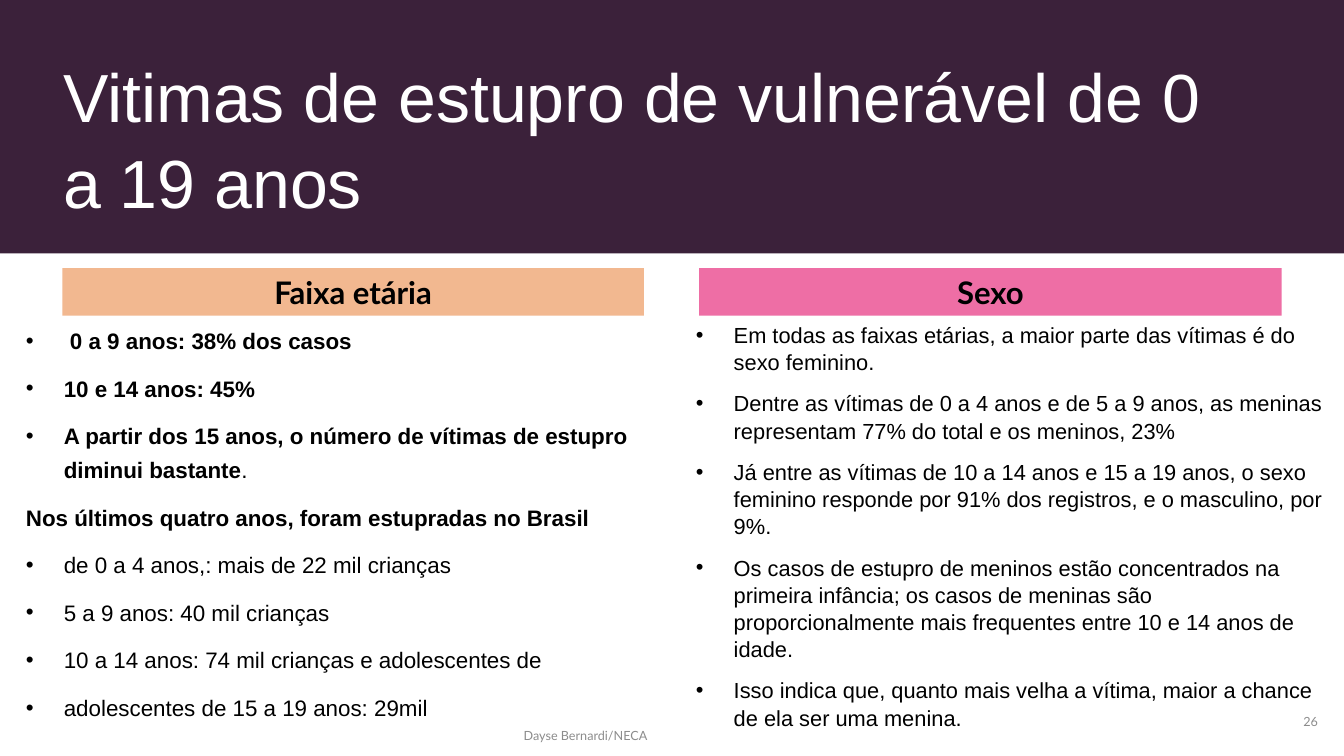
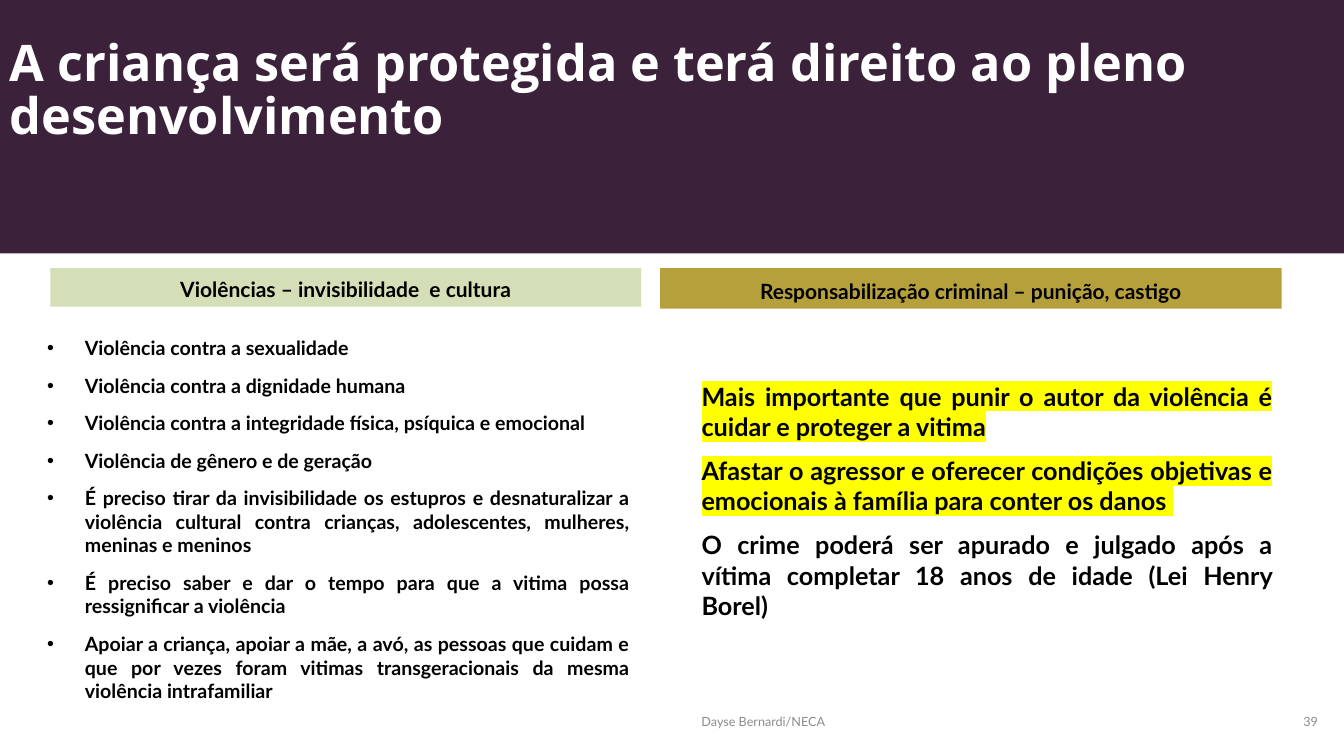
from lxml.etree import SubElement
from pptx import Presentation
from pptx.dml.color import RGBColor
from pptx.enum.shapes import MSO_SHAPE
from pptx.enum.text import MSO_ANCHOR as Anchor, PP_ALIGN as Align
from pptx.oxml.ns import qn
from pptx.util import Pt

COLORS = {
    "band": "3B213A", "white": "FFFFFF", "text": "000000", "footer": "8C8C8C",
    "peach": "F2B890", "pink": "EE6EA5", "sage": "D4DEB7", "gold": "B6A03C",
    "marker": "FFFF00",
}
WIDTH, HEIGHT = 960, 540
BAND_HEIGHT = 181
HEADER_TOP = 191.5
FOOTER_HEIGHT = 29
INDENT = 27
SPACE_BEFORE = 10


def rgb(name):
    return RGBColor.from_string(COLORS[name])


class Deck:
    def __init__(self):
        self.prs = Presentation()
        self.prs.slide_width, self.prs.slide_height = Pt(WIDTH), Pt(HEIGHT)
        self.s = None

    def slide(self):
        self.s = self.prs.slides.add_slide(self.prs.slide_layouts[6])
        self.rect(0, 0, WIDTH, BAND_HEIGHT, "band")

    def rect(self, x, y, w, h, color):
        sp = self.s.shapes.add_shape(MSO_SHAPE.RECTANGLE, Pt(x), Pt(y), Pt(w), Pt(h))
        sp.shadow.inherit = False
        sp.fill.solid()
        sp.fill.fore_color.rgb = rgb(color)
        sp.line.fill.background()
        return sp

    def frame(self, x, y, w, h, anchor=Anchor.TOP):
        tf = self.s.shapes.add_textbox(Pt(x), Pt(y), Pt(w), Pt(h)).text_frame
        tf.word_wrap = True
        tf.vertical_anchor = anchor
        return tf

    def run(self, p, text, size, font="Lato", color="text", bold=False, marked=False):
        r = p.add_run()
        r.text = text
        r.font.size, r.font.name, r.font.bold = Pt(size), font, bold
        r.font.color.rgb = rgb(color)
        if marked:
            rPr = r.font._element
            highlight = SubElement(rPr, qn("a:highlight"))
            SubElement(highlight, qn("a:srgbClr")).set("val", COLORS["marker"])
            rPr.find(qn("a:latin")).addprevious(highlight)

    def title(self, x, y, w, h, text, size, font, spacing, bold=False):
        p = self.frame(x, y, w, h, Anchor.BOTTOM).paragraphs[0]
        p.line_spacing = spacing
        self.run(p, text, size, font, "white", bold)

    def header(self, x, w, h, text, size, color):
        tf = self.rect(x, HEADER_TOP, w, h, color).text_frame
        tf.word_wrap = True
        tf.vertical_anchor = Anchor.BOTTOM
        p = tf.paragraphs[0]
        p.alignment = Align.CENTER
        self.run(p, text, size, bold=True)

    def body(self, x, y, w, h, items, size, font="Lato", spacing=1.0, align=Align.LEFT):
        """Each item is (has bullet, [(text, run options), ...])."""
        tf = self.frame(x, y, w, h)
        for i, (bullet, runs) in enumerate(items):
            p = tf.add_paragraph() if i else tf.paragraphs[0]
            if bullet:
                pPr = p._p.get_or_add_pPr()
                pPr.set("marL", str(Pt(INDENT)))
                pPr.set("indent", str(-Pt(INDENT)))
                SubElement(pPr, qn("a:buFont")).set("typeface", "Arial")
                SubElement(pPr, qn("a:buChar")).set("char", "•")
            p.alignment, p.line_spacing = align, spacing
            p.space_before = Pt(SPACE_BEFORE if i else 0)
            for text, options in runs:
                self.run(p, text, size, font, **options)

    def footer(self, x, y, number):
        for left, top, width, text, align in (
            (x, y, 324, "Dayse Bernardi/NECA", Align.LEFT),
            (847.5, 500.5, 101, number, Align.RIGHT),
        ):
            p = self.frame(left, top, width, FOOTER_HEIGHT, Anchor.MIDDLE).paragraphs[0]
            p.alignment = align
            self.run(p, text, 9, color="footer")


def bullets(*texts, **options):
    return [(True, [(text, options)]) for text in texts]


def victims_slide(deck):
    bold = {"bold": True}
    deck.slide()
    deck.title(38, 29, 856, 133, "Vitimas de estupro de vulnerável de 0 a 19 anos",
               48.6, "Arial", 1.05)
    deck.header(44.5, 415.5, 34, "Faixa etária", 22.2, "peach")
    ages = [
        *bullets(" 0 a 9 anos: 38% dos casos", "10 e 14 anos: 45%", **bold),
        (True, [("A partir dos 15 anos, o número de vítimas de estupro diminui bastante", bold),
                (".", {})]),
        (False, [("Nos últimos quatro anos, foram estupradas no Brasil", bold)]),
        *bullets("de 0 a 4 anos,: mais de 22 mil crianças",
                 "5 a 9 anos: 40 mil crianças",
                 "10 a 14 anos: 74 mil crianças e adolescentes de",
                 "adolescentes de 15 a 19 anos: 29mil"),
    ]
    deck.body(11.5, 225.5, 471, 304, ages, 16, "Arial", 1.25)
    deck.header(499.5, 416, 34, "Sexo", 22.2, "pink")
    sexes = bullets(
        "Em todas as faixas etárias, a maior parte das vítimas é do sexo feminino.",
        "Dentre as vítimas de 0 a 4 anos e de 5 a 9 anos, as meninas representam 77% "
        "do total e os meninos, 23%",
        "Já entre as vítimas de 10 a 14 anos e 15 a 19 anos, o sexo feminino responde "
        "por 91% dos registros, e o masculino, por 9%.",
        "Os casos de estupro de meninos estão concentrados na primeira infância; os casos "
        "de meninas são proporcionalmente mais frequentes entre 10 e 14 anos de idade.",
        "Isso indica que, quanto mais velha a vítima, maior a chance de ela ser uma menina.",
    )
    deck.body(490, 225.5, 470, 304, sexes, 15.6, "Arial", 1.04)
    deck.footer(367, 511, "26")


def protection_slide(deck):
    deck.slide()
    deck.title(0, 0, 894, 107,
               "A criança será protegida e terá direito ao pleno desenvolvimento",
               36, "Open Sans", 0.87, bold=True)
    deck.header(36, 422, 27.5, "Violências – invisibilidade  e cultura", 15, "sage")
    violences = bullets(
        "Violência contra a sexualidade",
        "Violência contra a dignidade humana",
        "Violência contra a integridade física, psíquica e emocional",
        "Violência de gênero e de geração",
        "É preciso tirar da invisibilidade os estupros e desnaturalizar a violência cultural "
        "contra crianças, adolescentes, mulheres, meninas e meninos",
        "É preciso saber e dar o tempo para que a vitima possa ressignificar a violência",
        "Apoiar a criança, apoiar a mãe, a avó, as pessoas que cuidam e que por vezes foram "
        "vitimas transgeracionais da mesma violência intrafamiliar",
        bold=True,
    )
    deck.body(26.5, 236.5, 430.5, 292, violences, 14, align=Align.JUSTIFY)
    deck.header(471.5, 444, 29, "Responsabilização criminal – punição, castigo", 15, "gold")
    priorities = [
        (False, [(text, {"bold": True, "marked": marked})])
        for text, marked in (
            ("Mais importante que punir o autor da violência é cuidar e proteger a vitima", True),
            ("Afastar o agressor e oferecer condições objetivas e emocionais à família "
             "para conter os danos ", True),
            ("O crime poderá ser apurado e julgado após a vítima completar 18 anos de idade "
             "(Lei Henry Borel)", False),
        )
    ]
    deck.body(494, 268.5, 422, 219, priorities, 18, align=Align.JUSTIFY)
    deck.footer(494, 500.5, "39")


def main():
    deck = Deck()
    victims_slide(deck)
    protection_slide(deck)
    deck.prs.save("out.pptx")


if __name__ == "__main__":
    main()
